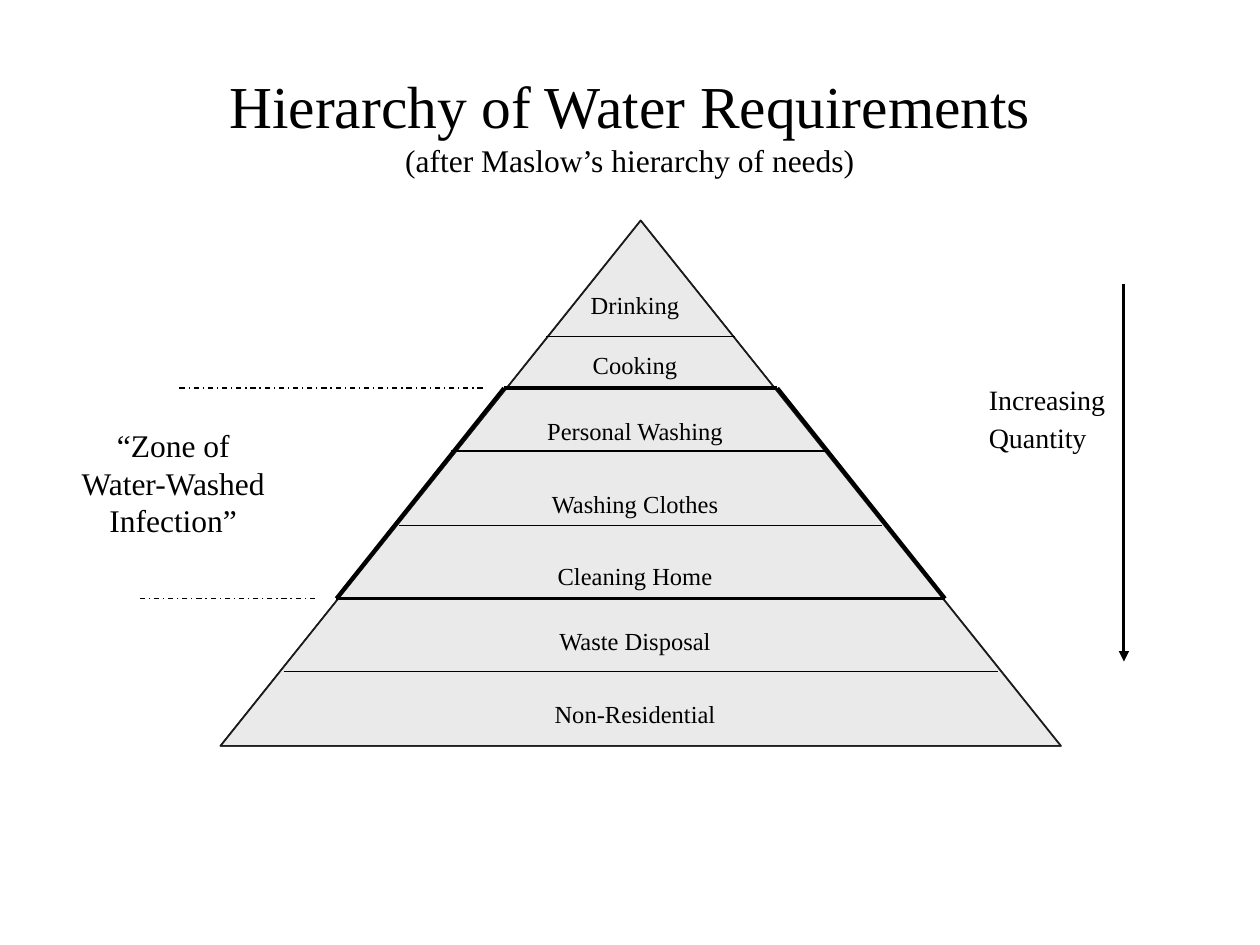
from dataclasses import dataclass

import pptx
import pptx.dml.color
import pptx.enum.dml
import pptx.enum.shapes
import pptx.enum.text
import pptx.oxml
import pptx.util
from pptx.util import Inches

DASH = pptx.enum.dml.MSO_LINE.DASH_DOT
CENTER = pptx.enum.text.PP_ALIGN.CENTER
LEFT = pptx.enum.text.PP_ALIGN.LEFT


@dataclass(frozen=True)
class Theme:
    font: str = "Times New Roman"
    ink: str = "000000"
    outline: str = "1C1C1C"
    pyramid: str = "EAEAEA"
    title: int = 34
    note: int = 18
    quantity: int = 16
    tier: int = 14
    thin: float = 0.75
    edge: float = 1
    arrow: float = 1.75
    thick: float = 2.25


class SlideBuilder:
    def __init__(self, slide, theme):
        self.slide = slide
        self.theme = theme

    @staticmethod
    def color(value):
        return pptx.dml.color.RGBColor.from_string(value)

    def triangle(self, left, top, width, height, weight, fill=None):
        shape = self.slide.shapes.add_shape(
            pptx.enum.shapes.MSO_SHAPE.FLOWCHART_EXTRACT,
            Inches(left), Inches(top), Inches(width), Inches(height))
        shape.shadow.inherit = False
        if fill:
            shape.fill.solid()
            shape.fill.fore_color.rgb = self.color(fill)
        else:
            shape.fill.background()
        shape.line.color.rgb = self.color(self.theme.outline)
        shape.line.width = pptx.util.Pt(weight)

    def line(self, start, end, weight, dash=None, arrow=False):
        connector = self.slide.shapes.add_connector(
            pptx.enum.shapes.MSO_CONNECTOR.STRAIGHT,
            *(Inches(value) for value in (*start, *end)))
        connector.line.color.rgb = self.color(self.theme.ink)
        connector.line.width = pptx.util.Pt(weight)
        if dash:
            connector.line.dash_style = dash
        if arrow:
            head = pptx.oxml.parse_xml(
                '<a:tailEnd xmlns:a="http://schemas.openxmlformats.org/'
                'drawingml/2006/main" type="triangle"/>')
            connector.line._get_or_add_ln().append(head)
        connector._element.spPr.append(pptx.oxml.parse_xml(
            '<a:effectLst xmlns:a="http://schemas.openxmlformats.org/'
            'drawingml/2006/main"/>'))

    def text(self, left, top, width, height, lines, align=CENTER, gap=0):
        """Place (wording, size) lines, with gap points between paragraphs."""
        frame = self.slide.shapes.add_textbox(
            Inches(left), Inches(top), Inches(width), Inches(height)).text_frame
        frame.word_wrap = True
        frame.auto_size = pptx.enum.text.MSO_AUTO_SIZE.SHAPE_TO_FIT_TEXT
        for index, (wording, size) in enumerate(lines):
            paragraph = frame.add_paragraph() if index else frame.paragraphs[0]
            paragraph.text = wording
            paragraph.alignment = align
            if index and gap:
                paragraph.space_before = pptx.util.Pt(gap)
            paragraph.font.name = self.theme.font
            paragraph.font.size = pptx.util.Pt(size)
            paragraph.font.color.rgb = self.color(self.theme.ink)


def main():
    theme = Theme()
    deck = pptx.Presentation()
    deck.slide_width, deck.slide_height = Inches(10), Inches(7.5)
    page = SlideBuilder(deck.slides.add_slide(deck.slide_layouts[6]), theme)

    # Pyramid with a crisp outline on top
    pyramid = (1.75, 1.75, 6.67, 4.17)
    page.triangle(*pyramid, theme.edge, theme.pyramid)
    page.triangle(*pyramid, theme.thin)

    # Tier dividers: left, right, height
    zone_top, zone_bottom = 3.08, 4.75
    dividers = [
        (4.33, 5.83, 2.67), (4, 6.17, zone_top), (3.58, 6.58, 3.58),
        (3.17, 7, 4.17), (2.67, 7.5, zone_bottom), (2.25, 7.92, 5.33),
    ]
    for left, right, y in dividers:
        weight = theme.thick if y in (zone_top, zone_bottom) else theme.thin
        page.line((left, y), (right, y), weight)

    # Tier labels, all on one centre line
    label_center = 5.04
    tiers = [
        ("Drinking", 2.25, 1.08), ("Cooking", 2.73, 1.08),
        ("Personal Washing", 3.25, 2.42), ("Washing Clothes", 3.83, 2.42),
        ("Cleaning Home", 4.4, 2.42), ("Waste Disposal", 4.92, 2.42),
        ("Non-Residential", 5.5, 2.42),
    ]
    for label, top, width in tiers:
        page.text(label_center - width / 2, top, width, 0.33,
                  [(label, theme.tier)])

    # Title and subtitle
    page.text(1, 0.5, 8, 0.97, [
        ("Hierarchy of Water Requirements", theme.title),
        ("(after Maslow’s hierarchy of needs)", theme.note)])

    # Increasing quantity arrow
    page.line((8.92, 2.25), (8.92, 5.25), theme.arrow, arrow=True)
    page.text(7.75, 2.99, 1.17, 0.68, [
        ("Increasing", theme.quantity), ("Quantity", theme.quantity)],
        align=LEFT, gap=2.4)

    # Water-washed zone: heavy sides, dashed guides and caption
    page.line((2.67, zone_bottom), (4, zone_top), theme.thick)
    page.line((6.17, zone_top), (7.5, zone_bottom), theme.thick)
    page.line((3.83, zone_top), (1.42, zone_top), theme.thin, DASH)
    page.line((2.5, zone_bottom), (1.08, zone_bottom), theme.thin, DASH)
    page.text(0.5, 3.33, 1.75, 1,
              [("“Zone of Water-Washed Infection”", theme.note)])

    deck.save("out.pptx")


if __name__ == "__main__":
    main()
